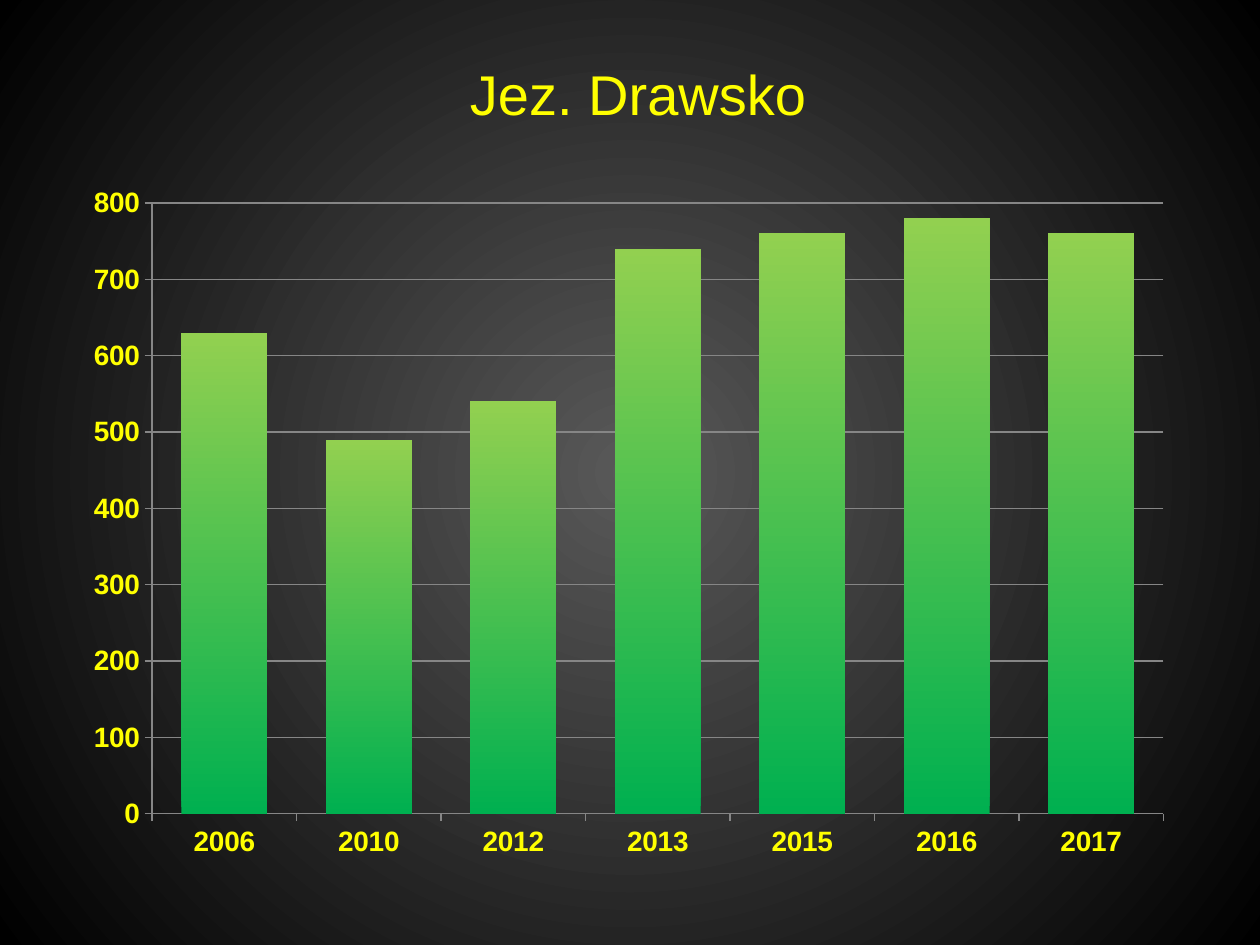
from dataclasses import dataclass

from lxml import etree
from pptx import Presentation
from pptx import util as u
from pptx.chart.data import CategoryChartData
from pptx.dml.color import RGBColor
from pptx.enum import chart as ch, text
from pptx.oxml import parse_xml
from pptx.oxml.ns import nsdecls, qn


@dataclass(frozen=True)
class Theme:
    font: str = "Arial"
    ink: str = "FFFF00"
    grid: str = "868686"
    glow: tuple = ("595959", "000000")
    bars: tuple = ("00B050", "92D050")
    title: int = 32
    label: int = 16


class Deck:
    def __init__(self, theme):
        self.theme = theme
        self.prs = Presentation()
        self.prs.slide_width, self.prs.slide_height = u.Inches(10), u.Inches(7.5)
        self.s = self.prs.slides.add_slide(self.prs.slide_layouts[6])

    def style(self, font, size, bold):
        font.name, font.size, font.bold = self.theme.font, u.Pt(size), bold
        font.color.rgb = RGBColor.from_string(self.theme.ink)

    def gradient(self, fill, colors):
        fill.gradient()
        for stop, color in zip(fill.gradient_stops, colors):
            stop.color.rgb = RGBColor.from_string(color)

    def background(self):
        self.gradient(self.s.background.fill, self.theme.glow)
        lin = next(self.s.element.iter(qn("a:lin")))
        radial = parse_xml(
            f'<a:path {nsdecls("a")} path="circle">'
            '<a:fillToRect l="50000" t="50000" r="50000" b="50000"/></a:path>')
        lin.getparent().replace(lin, radial)

    def title(self, words, *box):
        tf = self.s.shapes.add_textbox(*map(u.Inches, box)).text_frame
        tf.word_wrap = True
        tf.vertical_anchor = text.MSO_ANCHOR.MIDDLE
        p = tf.paragraphs[0]
        p.text, p.alignment = words, text.PP_ALIGN.CENTER
        self.style(p.font, self.theme.title, False)

    def columns(self, values, top, step, plot_area, *box):
        data = CategoryChartData()
        data.categories = list(values)
        data.add_series("Series 1", values.values())
        chart = self.s.shapes.add_chart(
            ch.XL_CHART_TYPE.COLUMN_CLUSTERED, *map(u.Inches, box), data).chart
        chart.has_legend = chart.has_title = False
        self.style(chart.font, self.theme.label, True)

        plot = chart.plots[0]
        plot.gap_width, plot.vary_by_categories = 68, False
        fill = plot.series[0].format.fill
        self.gradient(fill, self.theme.bars)
        fill.gradient_angle = 90

        axis = chart.value_axis
        axis.minimum_scale, axis.maximum_scale, axis.major_unit = 0, top, step
        axis.has_major_gridlines = True
        for part in (axis, chart.category_axis, axis.major_gridlines):
            part.format.line.width = u.Pt(0.75)
            part.format.line.color.rgb = RGBColor.from_string(self.theme.grid)
        for part in (axis, chart.category_axis):
            part.major_tick_mark = ch.XL_TICK_MARK.OUTSIDE
        self.place_plot(chart, plot_area)

    def place_plot(self, chart, plot_area):
        area = next(chart.element.iter(qn("c:plotArea")))
        for old in area.findall(qn("c:layout")):
            area.remove(old)
        layout = parse_xml(f'<c:layout {nsdecls("c")}><c:manualLayout/></c:layout>')
        area.insert(0, layout)
        settings = [("layoutTarget", "inner"), ("xMode", "edge"), ("yMode", "edge")]
        for tag, val in settings + list(zip("xywh", plot_area)):
            etree.SubElement(layout[0], qn(f"c:{tag}")).set("val", str(val))


def main():
    deck = Deck(Theme())
    deck.background()
    deck.title("Jez. Drawsko", 1.22, 0.39, 7.69, 0.7)
    values = {"2006": 630, "2010": 490, "2012": 540, "2013": 740,
              "2015": 760, "2016": 780, "2017": 760}
    deck.columns(values, 800, 100, (0.07, 0.04, 0.91, 0.88), 0.59, 1.39, 8.82, 5.51)
    deck.prs.save("out.pptx")


if __name__ == "__main__":
    main()
